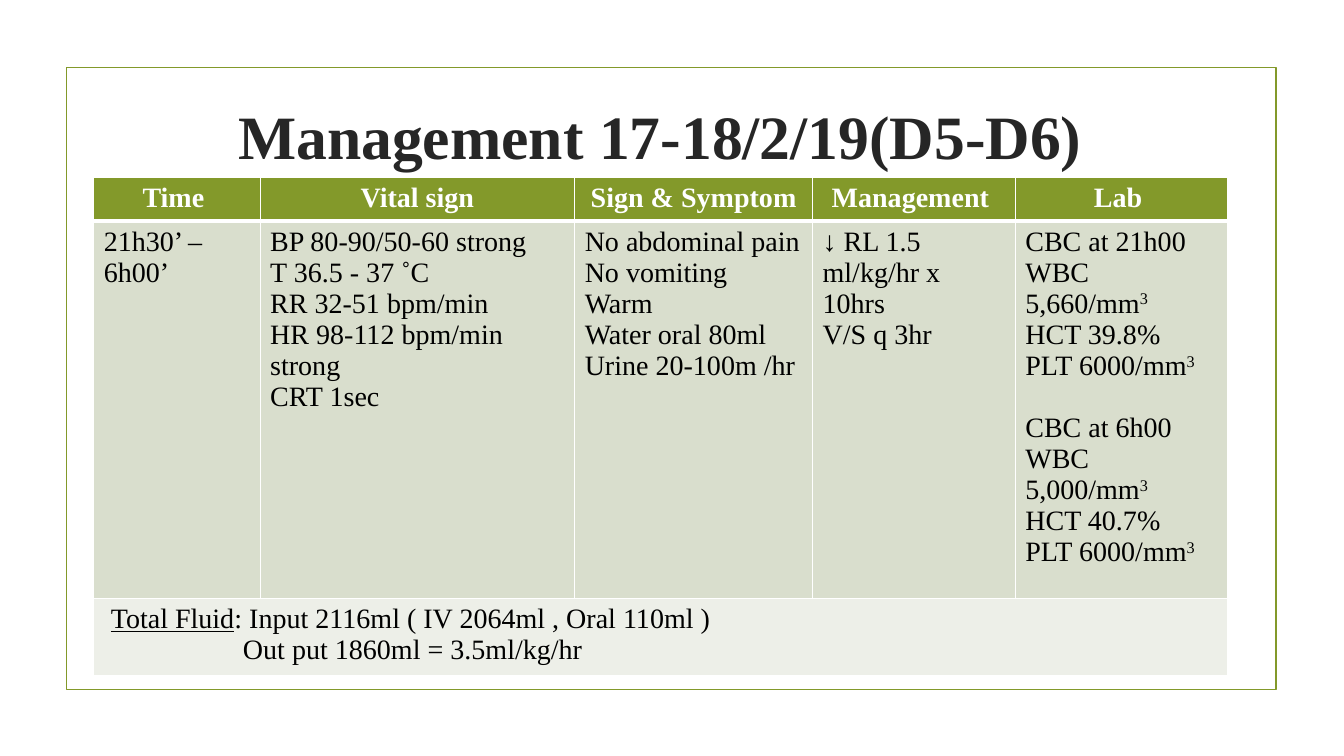
from lxml import etree
from pptx import Presentation
from pptx import util as u
from pptx.dml.color import RGBColor
from pptx.enum import shapes, text
from pptx.oxml.ns import qn


def rgb(value):
    return RGBColor.from_string(value)


class Deck:
    """Holds the style and the current slide, with a method per element."""

    font, green, ink, white = "Times New Roman", "83992A", "262626", "FFFFFF"
    body, total = "D9DECD", "EDEFE8"

    def __init__(self, prs):
        self.s = prs.slides.add_slide(prs.slide_layouts[6])

    def run(self, p, words, color, size=20, **extra):
        r = p.add_run()
        r.text = words
        for name, value in {"name": self.font, "size": u.Pt(size), "bold": False, **extra}.items():
            setattr(r.font, name, value)
        r.font.color.rgb = rgb(color)
        return r

    def frame(self, *box):
        sp = self.s.shapes.add_shape(shapes.MSO_SHAPE.RECTANGLE, *map(u.Inches, box))
        sp.shadow.inherit = False
        sp.fill.background()
        sp.line.color.rgb = rgb(self.green)
        sp.line.width = u.Pt(1.25)

    def title(self, words, *box):
        tf = self.s.shapes.add_textbox(*map(u.Inches, box)).text_frame
        for name, value in {"word_wrap": True, "vertical_anchor": text.MSO_ANCHOR.MIDDLE}.items():
            setattr(tf, name, value)
        p = tf.paragraphs[0]
        p.alignment = text.PP_ALIGN.CENTER
        self.run(p, words, self.ink, 44, bold=True)

    def table(self, left, top, widths, heights):
        box = map(u.Inches, (left, top, sum(widths), sum(heights)))
        tbl = self.s.shapes.add_table(len(heights), len(widths), *box).table
        tbl.horz_banding = False
        for col, width in zip(tbl.columns, widths):
            col.width = u.Inches(width)
        for row, height in zip(tbl.rows, heights):
            row.height = u.Inches(height)
        return tbl

    def style_cell(self, cell, fill, bottom=1):
        tc_pr = cell._tc.get_or_add_tcPr()
        for side, width in {"lnL": 1, "lnR": 1, "lnT": 1, "lnB": bottom}.items():
            ln = etree.SubElement(tc_pr, qn("a:" + side), w=str(u.Pt(width)))
            solid = etree.SubElement(ln, qn("a:solidFill"))
            etree.SubElement(solid, qn("a:srgbClr"), val=self.white)
        cell.fill.solid()
        cell.fill.fore_color.rgb = rgb(fill)

    def header(self, cell, words):
        self.style_cell(cell, self.green, 3)
        p = cell.text_frame.paragraphs[0]
        p.alignment = text.PP_ALIGN.CENTER
        self.run(p, words, self.white, bold=True)

    def paragraphs(self, cell, lines):
        tf = cell.text_frame
        for i, line in enumerate(lines):
            yield (tf.add_paragraph() if i else tf.paragraphs[0]), line

    def entries(self, cell, lines):
        self.style_cell(cell, self.body)
        for p, line in self.paragraphs(cell, lines):
            base, cubed, _ = line.partition("³")
            self.run(p, base, "000000")
            if cubed:
                r = self.run(p, "3", "000000")
                r._r.get_or_add_rPr().set("baseline", "30000")

    def totals(self, cell, lines):
        for p, (indent, parts) in self.paragraphs(cell, lines):
            p._p.get_or_add_pPr().set("marL", str(u.Inches(indent)))
            for words, underline in parts:
                self.run(p, words, "000000", underline=underline)


HEADS = ["Time ", "Vital sign", "Sign & Symptom", "Management ", "Lab "]
ENTRIES = [
    ["21h30’ – 6h00’"],
    ["BP 80-90/50-60 strong", "T 36.5 - 37 ˚C", "RR 32-51 bpm/min",
     "HR 98-112 bpm/min strong", "CRT 1sec"],
    ["No abdominal pain", "No vomiting", "Warm", "Water oral 80ml", "Urine 20-100m /hr"],
    ["↓ RL 1.5 ml/kg/hr x 10hrs", "V/S q 3hr"],
    ["CBC at 21h00", "WBC 5,660/mm³", "HCT 39.8%", "PLT 6000/mm³",
     "CBC at 6h00", "WBC 5,000/mm³", "HCT 40.7%", "PLT 6000/mm³"],
]
TOTALS = [
    (0.07, [("Total Fluid", True), (": Input 2116ml ( IV 2064ml , Oral 110ml )", False)]),
    (1.38, [("Out put 1860ml = 3.5ml/kg/hr", False)]),
]


def main():
    prs = Presentation()
    prs.slide_width, prs.slide_height = u.Inches(13.33), u.Inches(7.5)
    deck = Deck(prs)
    deck.frame(0.66, 0.67, 12, 6.17)
    deck.title("Management 17-18/2/19(D5-D6)", 1.3, 0.62, 10.5, 1.43)
    tbl = deck.table(0.93, 1.76, [1.65, 3.12, 2.36, 2.01, 2.11], [0.41, 3.49, 0.71])
    for col, (head, lines) in enumerate(zip(HEADS, ENTRIES)):
        deck.header(tbl.cell(0, col), head)
        deck.entries(tbl.cell(1, col), lines)
        deck.style_cell(tbl.cell(2, col), deck.total)
    tbl.cell(1, 4).text_frame.paragraphs[4].space_before = u.Pt(22)
    tbl.cell(2, 0).merge(tbl.cell(2, 4))
    deck.totals(tbl.cell(2, 0), TOTALS)
    prs.save("out.pptx")


if __name__ == "__main__":
    main()
